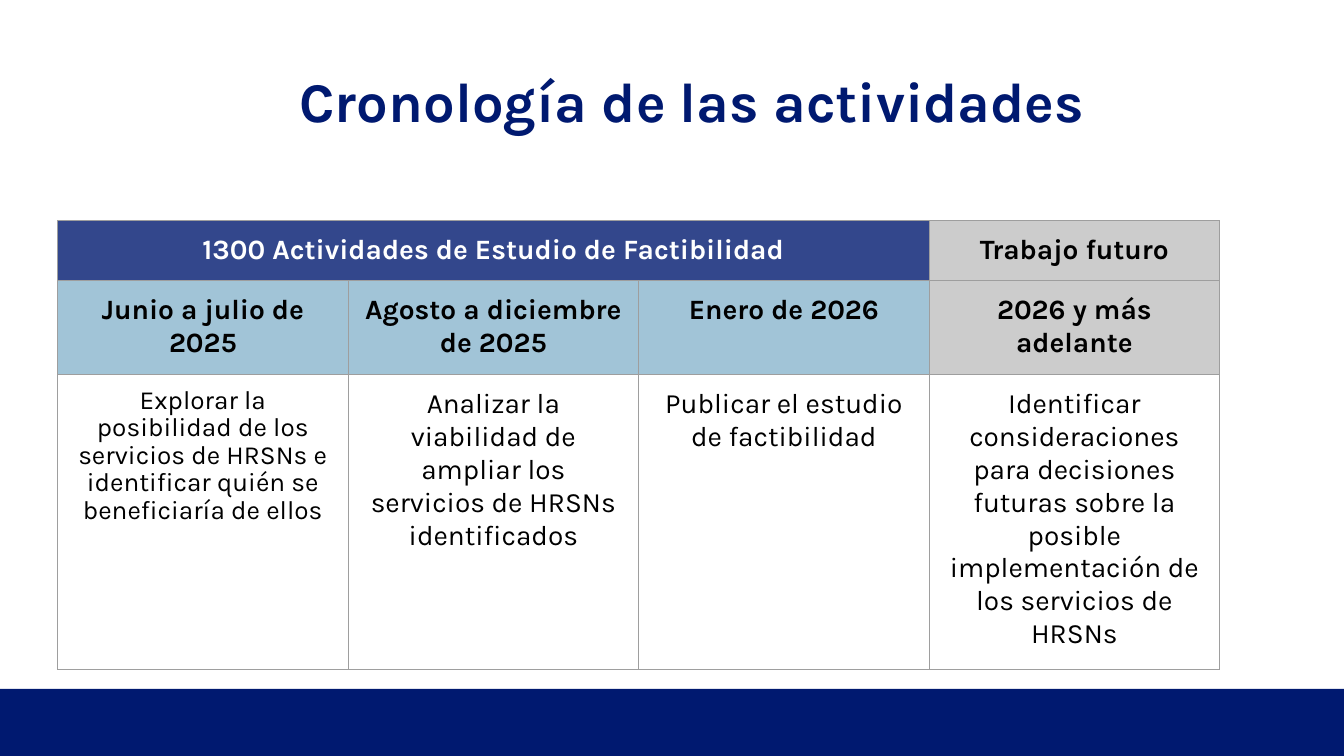
from lxml import etree
from pptx import Presentation
from pptx.dml.color import RGBColor as RGB
from pptx.enum.shapes import MSO_SHAPE as Kind
from pptx.enum.text import MSO_ANCHOR as Anchor, PP_ALIGN as Align
from pptx.oxml.ns import qn
from pptx.util import Cm, Pt

NAVY = RGB(0x00, 0x19, 0x70)
SKY = RGB(0xA1, 0xC4, 0xD7)
GREY = RGB(0xCC, 0xCC, 0xCC)
EDGE = RGB(0x9E, 0x9E, 0x9E)
WHITE = RGB(0xFF, 0xFF, 0xFF)
BLACK = RGB(0x00, 0x00, 0x00)

WIDE, HIGH = 25.4, 14.29
COL = 5.49
ROWS = [1.13, 1.75, 5.46]
HEADS = [
    ("Junio a julio de 2025", SKY),
    ("Agosto a diciembre de 2025", SKY),
    ("Enero de 2026", SKY),
    ("2026 y más adelante", GREY),
]
TASKS = [
    ("Explorar la posibilidad de los servicios de HRSNs e identificar "
     "quién se beneficiaría de ellos", 14, 0.9),
    ("Analizar la viabilidad de ampliar los servicios de HRSNs "
     "identificados", 15, None),
    ("Publicar el estudio de factibilidad", 15, None),
    ("Identificar consideraciones para decisiones futuras sobre la posible "
     "implementación de los servicios de HRSNs", 15, None),
]


class Deck:
    font = "Karla"
    pad = Cm(0.25)

    def __init__(self):
        self.file = Presentation()
        self.file.slide_width = Cm(WIDE)
        self.file.slide_height = Cm(HIGH)
        self.slide = self.file.slides.add_slide(self.file.slide_layouts[6])

    def label(self, frame, text, size, color, bold=True, lead=None):
        frame.word_wrap = True
        para = frame.paragraphs[0]
        para.alignment = Align.CENTER
        if lead:
            para.line_spacing = lead
        run = para.add_run()
        run.text = text
        font = run.font
        font.name, font.size, font.bold = self.font, Pt(size), bold
        font.color.rgb = color

    def band(self, left, top, width, height, color):
        bar = self.slide.shapes.add_shape(
            Kind.RECTANGLE, Cm(left), Cm(top), Cm(width), Cm(height))
        bar.shadow.inherit = False
        bar.fill.solid()
        bar.fill.fore_color.rgb = color
        bar.line.fill.background()

    def title(self, left, top, width, height, text):
        frame = self.slide.shapes.add_textbox(
            Cm(left), Cm(top), Cm(width), Cm(height)).text_frame
        frame.vertical_anchor = Anchor.MIDDLE
        frame.margin_left = frame.margin_right = Cm(0.18)
        frame.margin_top = frame.margin_bottom = Cm(0.1)
        self.label(frame, text, 30, NAVY, lead=0.9)

    def table(self, left, top, cols, rows):
        shape = self.slide.shapes.add_table(
            len(rows), len(cols), Cm(left), Cm(top),
            Cm(sum(cols)), Cm(sum(rows)))
        grid = shape.table
        grid.first_row = grid.horz_banding = False
        for col, width in zip(grid.columns, cols):
            col.width = Cm(width)
        for row, height in zip(grid.rows, rows):
            row.height = Cm(height)
        for cell in grid.iter_cells():
            self.edge(cell)
            cell.fill.background()
        return grid

    def edge(self, cell):
        props = cell._tc.get_or_add_tcPr()
        for side in ("lnL", "lnR", "lnT", "lnB"):
            line = etree.SubElement(props, qn(f"a:{side}"), w=str(Pt(0.75)))
            fill = etree.SubElement(line, qn("a:solidFill"))
            etree.SubElement(fill, qn("a:srgbClr"), val=str(EDGE))

    def cell(self, cell, text, fill=None, alpha=None, size=15,
             color=BLACK, bold=True, lead=None):
        cell.margin_left = cell.margin_right = self.pad
        cell.margin_top = cell.margin_bottom = self.pad
        if fill is not None:
            cell.fill.solid()
            cell.fill.fore_color.rgb = fill
        if alpha:
            tint = cell._tc.tcPr.find(qn("a:solidFill"))[0]
            etree.SubElement(tint, qn("a:alpha"), val=str(alpha * 1000))
        self.label(cell.text_frame, text, size, color, bold, lead)


def main():
    deck = Deck()
    deck.band(0, 13.02, WIDE, 1.27, NAVY)
    deck.title(1.09, 0.91, 23.98, 2.11, "Cronología de las actividades")
    grid = deck.table(1.09, 4.17, [COL] * len(HEADS), ROWS)
    grid.cell(0, 0).merge(grid.cell(0, 2))
    deck.cell(grid.cell(0, 0), "1300 Actividades de Estudio de Factibilidad",
              NAVY, alpha=80, color=WHITE)
    deck.cell(grid.cell(0, 3), "Trabajo futuro", GREY)
    for col, (text, fill) in enumerate(HEADS):
        deck.cell(grid.cell(1, col), text, fill)
    for col, (text, size, lead) in enumerate(TASKS):
        deck.cell(grid.cell(2, col), text, size=size, bold=False, lead=lead)
    deck.file.save("out.pptx")


if __name__ == "__main__":
    main()
